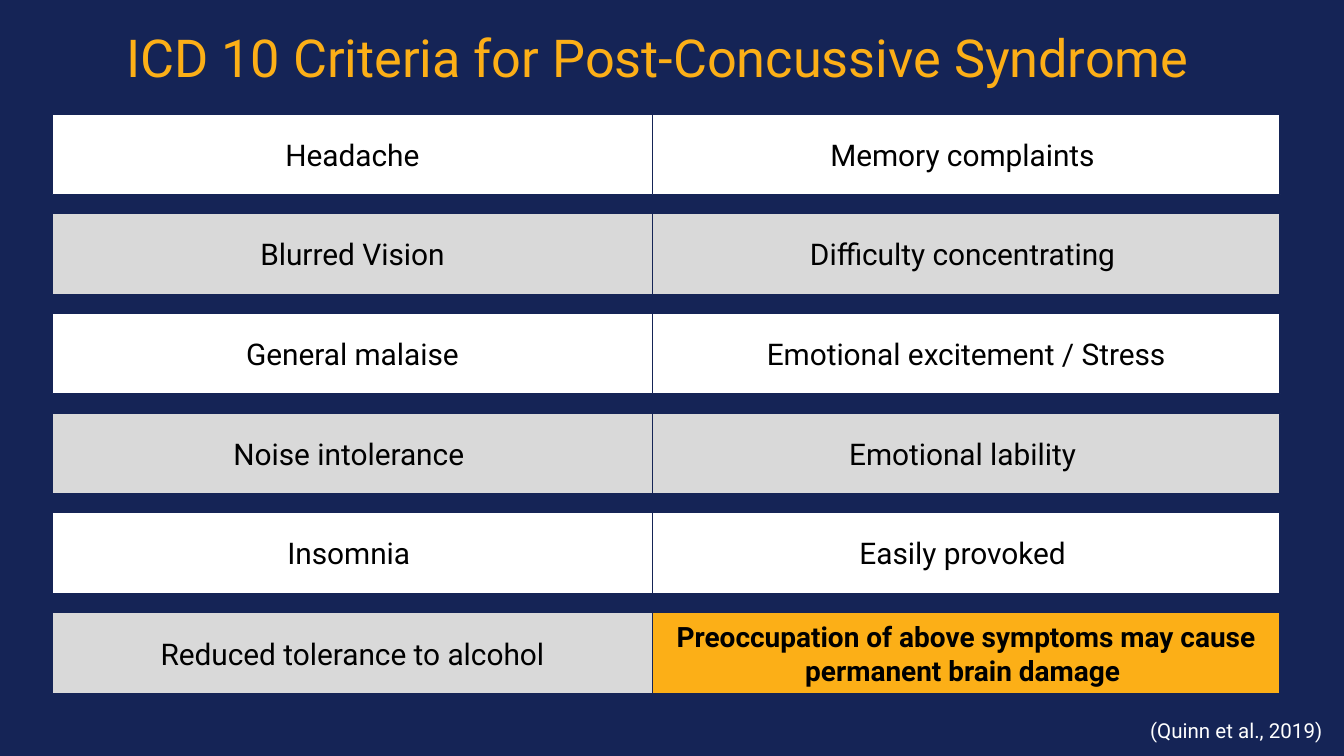
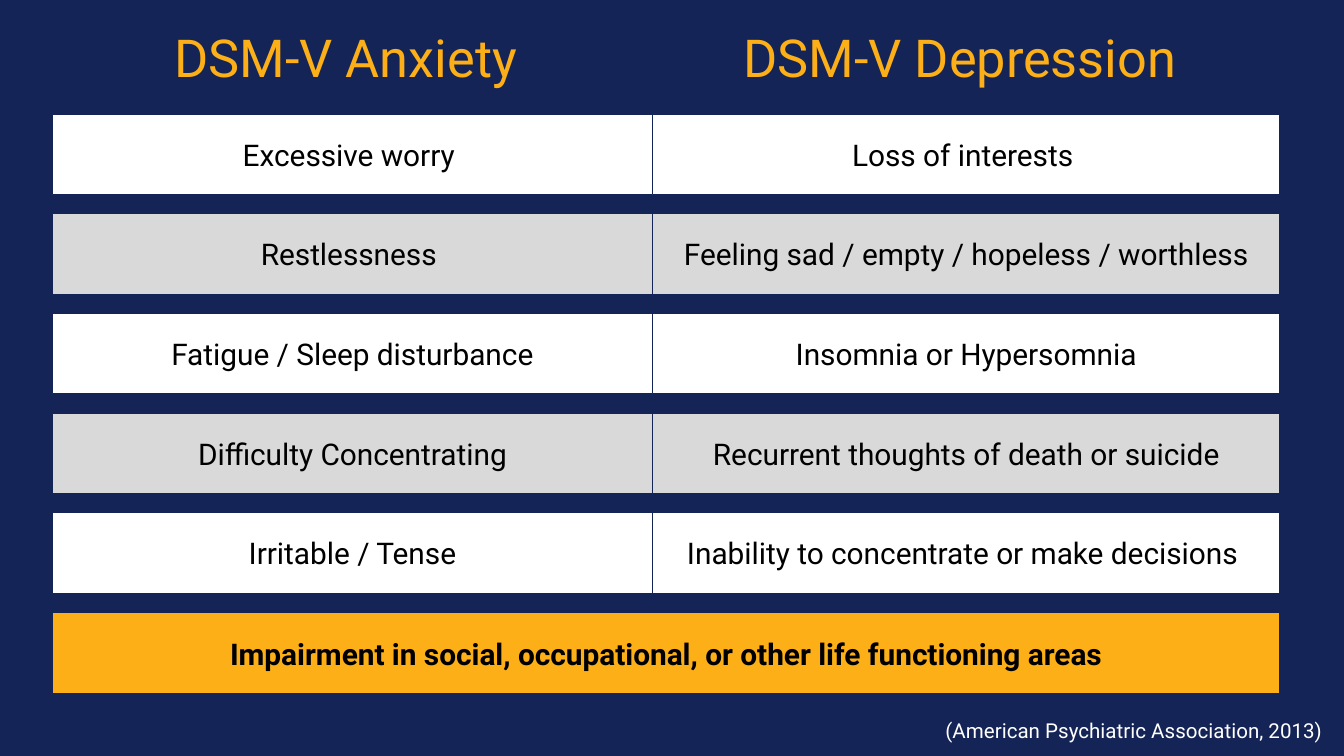
from pptx import Presentation
from pptx.dml.color import RGBColor
from pptx.enum import shapes, text
from pptx.util import Emu, Pt

PX = 4572  # 200 px to the inch
FONT = "Roboto"
NAVY, GOLD, WHITE, GREY, BLACK = "152456", "FCAF17", "FFFFFF", "D9D9D9", "000000"
MID, RIGHT = text.PP_ALIGN.CENTER, text.PP_ALIGN.RIGHT

# Grid of bars: two columns (left, width), six rows
COLS = [(78, 893), (971, 934)]
TOP, LAST, ROWS, HIGH = 170, 912, 6, 120


def px(n):
    return Emu(n * PX)


def paint(hue):
    return RGBColor.from_string(hue)


def row_top(row):
    return TOP + (LAST - TOP) * row // (ROWS - 1)


def write(shape, words, size, hue, align, bold=False, pad=20):
    frame = shape.text_frame
    frame.word_wrap = True
    frame.margin_left = frame.margin_right = px(20)
    frame.margin_top = frame.margin_bottom = px(pad)
    para = frame.paragraphs[0]
    para.alignment = align
    run = para.add_run()
    run.text = words
    font = run.font
    font.name, font.size, font.bold = FONT, Pt(size), bold
    font.color.rgb = paint(hue)
    return frame


def add_text(slide, box, words, size, hue, align, pad=20):
    shape = slide.shapes.add_textbox(*map(px, box))
    frame = write(shape, words, size, hue, align, pad=pad)
    frame.vertical_anchor = text.MSO_ANCHOR.TOP


def add_title(slide, left, width, words):
    add_text(slide, (left, 28, width, 192), words, 28, GOLD, MID, pad=10)


def add_source(slide, words):
    add_text(slide, (1222, 1050, 766, 78), words, 11, WHITE, RIGHT)


def add_bar(slide, row, left, width, words, fill, size=16, bold=False):
    box = (left, row_top(row), width, HIGH)
    bar = slide.shapes.add_shape(shapes.MSO_SHAPE.RECTANGLE, *map(px, box))
    bar.shadow.inherit = False
    bar.fill.solid()
    bar.fill.fore_color.rgb = paint(fill)
    bar.line.color.rgb = paint(NAVY)
    bar.line.width = Pt(0.75)
    frame = write(bar, words, size, BLACK, MID, bold)
    frame.vertical_anchor = text.MSO_ANCHOR.MIDDLE


def add_column(slide, col, items):
    for row, words in enumerate(items):
        add_bar(slide, row, *COLS[col], words, GREY if row % 2 else WHITE)


def add_slide(deck):
    slide = deck.slides.add_slide(deck.slide_layouts[6])
    slide.background.fill.solid()
    slide.background.fill.fore_color.rgb = paint(NAVY)
    return slide


def build_icd(deck):
    slide = add_slide(deck)
    add_title(slide, 78, 1800, "ICD 10 Criteria for Post-Concussive Syndrome")
    add_column(slide, 0, [
        "Headache", "Blurred Vision", "General malaise", "Noise intolerance ",
        "Insomnia ", "Reduced tolerance to alcohol"])
    add_column(slide, 1, [
        "Memory complaints ", "Difficulty concentrating ",
        "Emotional excitement / Stress", "Emotional lability ",
        "Easily provoked "])
    # Key point in the last cell
    add_bar(slide, 5, *COLS[1],
            "Preoccupation of above symptoms may cause permanent brain damage ",
            GOLD, size=15, bold=True)
    add_source(slide, "(Quinn et al., 2019)")


def build_dsm(deck):
    slide = add_slide(deck)
    add_title(slide, 78, 892, "DSM-V Anxiety ")
    add_title(slide, 992, 892, "DSM-V Depression ")
    add_column(slide, 0, [
        "Excessive worry ", "Restlessness ", "Fatigue / Sleep disturbance",
        "Difficulty Concentrating", "Irritable / Tense"])
    add_column(slide, 1, [
        "Loss of interests ", "Feeling sad / empty / hopeless / worthless",
        "Insomnia or Hypersomnia", "Recurrent thoughts of death or suicide",
        "Inability to concentrate or make decisions "])
    # Shared criterion across both columns
    add_bar(slide, 5, COLS[0][0], COLS[0][1] + COLS[1][1],
            "Impairment in social, occupational, or other life functioning areas",
            GOLD, bold=True)
    add_source(slide, "(American Psychiatric Association, 2013)")


def main():
    deck = Presentation()
    deck.slide_width, deck.slide_height = px(2000), px(1125)
    build_icd(deck)
    build_dsm(deck)
    deck.save("out.pptx")


if __name__ == "__main__":
    main()
